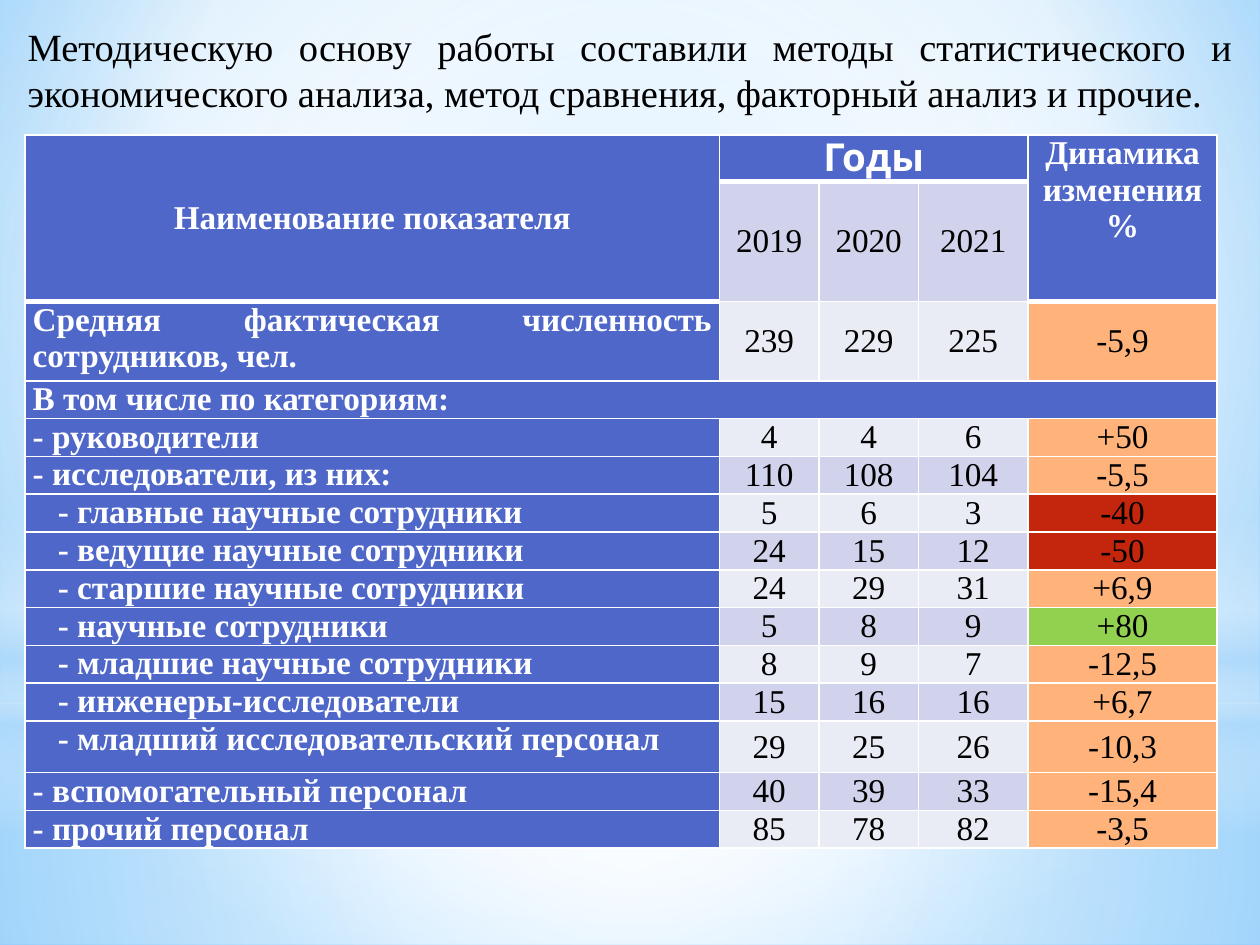
from lxml.etree import SubElement as Sub
from pptx import Presentation
from pptx.dml.color import RGBColor as Rgb
from pptx.enum.shapes import MSO_SHAPE as Form
from pptx.enum.text import MSO_ANCHOR as Anchor, MSO_AUTO_SIZE as Auto, PP_ALIGN as Align
from pptx.oxml.ns import qn
from pptx.util import Inches, Pt

SERIF = "Times New Roman"
WHITE = Rgb(0xFF, 0xFF, 0xFF)
BLACK = Rgb(0x00, 0x00, 0x00)
BLUE = Rgb(0x4E, 0x67, 0xC8)
DARK = Rgb(0xD0, 0xD3, 0xEB)
LIGHT = Rgb(0xE9, 0xEB, 0xF5)
PEACH = Rgb(0xFF, 0xB3, 0x7A)
RED = Rgb(0xC3, 0x26, 0x0C)
GREEN = Rgb(0x92, 0xD0, 0x50)
MIST = Rgb(0xB4, 0xDC, 0xFA)
SKY = Rgb(0x9E, 0xD5, 0xFF)
DEEP = Rgb(0x5B, 0xB9, 0xFF)

CENTER = (50, 50, 50, 50)
TITLE = ("Методическую основу работы составили методы статистического и "
         "экономического анализа, метод сравнения, факторный анализ и прочие.")
YEARS = ("2019", "2020", "2021")
GROUP = "В том числе по категориям:"
STAFF = [
    ("Средняя фактическая численность сотрудников, чел.", 239, 229, 225, "-5,9"),
    (GROUP,),
    ("- руководители", 4, 4, 6, "+50"),
    ("- исследователи, из них:", 110, 108, 104, "-5,5"),
    ("- главные научные сотрудники", 5, 6, 3, "-40"),
    ("- ведущие научные сотрудники", 24, 15, 12, "-50"),
    ("- старшие научные сотрудники", 24, 29, 31, "+6,9"),
    ("- научные сотрудники", 5, 8, 9, "+80"),
    ("- младшие научные сотрудники", 8, 9, 7, "-12,5"),
    ("- инженеры-исследователи", 15, 16, 16, "+6,7"),
    ("- младший исследовательский персонал", 29, 25, 26, "-10,3"),
    ("- вспомогательный персонал", 40, 39, 33, "-15,4"),
    ("- прочий персонал", 85, 78, 82, "-3,5"),
]
NESTED = range(6, 13)
WIDTHS = (5.51, 0.79, 0.79, 0.87, 1.5)
HEIGHTS = [0.37, 0.95, 0.63] + [0.3] * 9 + [0.41] + [0.3] * 2


def blend(old, stops, focus=None):
    grad = old.makeelement(qn("a:gradFill"), {"rotWithShape": "1"})
    old.getparent().replace(old, grad)
    marks = Sub(grad, qn("a:gsLst"))
    for place, color, alpha in stops:
        mark = Sub(marks, qn("a:gs"), pos=str(place * 1000))
        tint = Sub(mark, qn("a:srgbClr"), val=str(color))
        if alpha < 100:
            Sub(tint, qn("a:alpha"), val=str(alpha * 1000))
    if focus:
        ring = Sub(grad, qn("a:path"), {"path": "circle"})
        sides = {side: str(part * 1000) for side, part in zip("ltrb", focus)}
        Sub(ring, qn("a:fillToRect"), sides)
    else:
        Sub(grad, qn("a:lin"), ang="5400000", scaled="0")


def add_glow(slide, form, box, stops, focus=None):
    glow = slide.shapes.add_shape(form, *map(Inches, box))
    glow.shadow.inherit = False
    glow.line.fill.background()
    glow.fill.solid()
    blend(glow.element.spPr.find(qn("a:solidFill")), stops, focus)


def add_sky(slide):
    slide.background.fill.solid()
    base = slide.element.find(".//" + qn("p:bgPr")).find(qn("a:solidFill"))
    blend(base, [(0, SKY, 100), (60, WHITE, 100), (100, DEEP, 100)], (20, 10, 20, 60))
    add_glow(slide, Form.RECTANGLE, (0, 5.58, 10, 1.92),
             [(0, WHITE, 91), (37, WHITE, 76), (100, MIST, 79)], CENTER)
    add_glow(slide, Form.RECTANGLE, (0, 0, 10, 5.58),
             [(0, WHITE, 89), (48, WHITE, 62), (100, MIST, 79)], CENTER)
    add_glow(slide, Form.RECTANGLE, (0, 4.12, 10, 2.5),
             [(0, WHITE, 0), (29, WHITE, 30), (45, MIST, 40),
              (55, WHITE, 26), (65, MIST, 60), (100, WHITE, 0)])
    add_glow(slide, Form.OVAL, (0, 1.75, 10, 5.58),
             [(0, WHITE, 100), (56, WHITE, 0)], CENTER)


def style(para, align, size, color, bold=False, face=SERIF):
    para.alignment = align
    for run in para.runs:
        font = run.font
        font.name, font.size, font.bold = face, Pt(size), bold
        font.color.rgb = color


def add_title(slide, box):
    title = slide.shapes.title
    title.left, title.top, title.width, title.height = map(Inches, box)
    frame = title.text_frame
    frame.text = TITLE
    frame.word_wrap = True
    frame.auto_size = Auto.NONE
    frame.vertical_anchor = Anchor.TOP
    style(frame.paragraphs[0], Align.JUSTIFY, 22, BLACK)
    slide.shapes.element.append(title.element)


def is_thick(row, col):
    return row == 0 or (row == 1 and col in (0, 4))


def add_edges(cell, row, col):
    props = cell._tc.get_or_add_tcPr()
    widths = {"L": 1, "R": 1, "T": 3 if row and is_thick(row - 1, col) else 1,
              "B": 3 if is_thick(row, col) else 1}
    for spot, (side, width) in enumerate(widths.items()):
        line = props.makeelement(qn("a:ln" + side), {"w": str(Pt(width))})
        Sub(Sub(line, qn("a:solidFill")), qn("a:srgbClr"), val=str(WHITE))
        props.insert(spot, line)


def pick_fill(row, col, text):
    if col == 0 or row in (0, 3) or (row == 1 and col == 4):
        return BLUE
    if col < 4:
        return DARK if row % 2 else LIGHT
    change = float(text.replace(",", "."))
    return RED if change <= -40 else GREEN if change >= 80 else PEACH


def fill_cell(cell, row, col, text):
    cell.text = text
    cell.margin_left = cell.margin_right = Inches(0.06)
    cell.margin_top = cell.margin_bottom = 0
    head = row == 0 or col == 0
    middle = (row, col) == (0, 0) or not head
    cell.vertical_anchor = Anchor.MIDDLE if middle else Anchor.TOP
    cell.fill.solid()
    cell.fill.fore_color.rgb = pick_fill(row, col, text)
    add_edges(cell, row, col)
    para = cell.text_frame.paragraphs[0]
    align = Align.JUSTIFY if col == 0 and row else Align.CENTER
    if text == GROUP or row == 12 and col == 0:
        align = Align.LEFT
    years = (row, col) == (0, 1)
    style(para, align, 22 if years else 19, WHITE if head else BLACK, head,
          "Cabin" if years else SERIF)
    if not text:
        para.font.size = Pt(10)
    if col == 0 and row in NESTED:
        para._p.get_or_add_pPr().set("indent", str(Inches(0.2)))


def add_staff(slide, box):
    rows = [("Наименование показателя", "Годы", "", "", "Динамика изменения %"),
            ("", *YEARS, "")] + STAFF
    grid = slide.shapes.add_table(len(rows), len(WIDTHS), *map(Inches, box)).table
    for col, width in zip(grid.columns, WIDTHS):
        col.width = Inches(width)
    for line, height in zip(grid.rows, HEIGHTS):
        line.height = Inches(height)
    for row, items in enumerate(rows):
        for col in range(len(WIDTHS)):
            text = str(items[col]) if col < len(items) else ""
            fill_cell(grid.cell(row, col), row, col, text)
    for first, last in [((0, 0), (1, 0)), ((0, 1), (0, 3)),
                        ((0, 4), (1, 4)), ((3, 0), (3, 4))]:
        grid.cell(*first).merge(grid.cell(*last))


def main():
    deck = Presentation()
    deck.slide_width, deck.slide_height = Inches(10), Inches(7.5)
    slide = deck.slides.add_slide(deck.slide_layouts[5])
    add_sky(slide)
    add_title(slide, (0.12, 0.13, 9.76, 0.84))
    add_staff(slide, (0.2, 1.07, sum(WIDTHS), sum(HEIGHTS)))
    deck.save("out.pptx")


if __name__ == "__main__":
    main()
